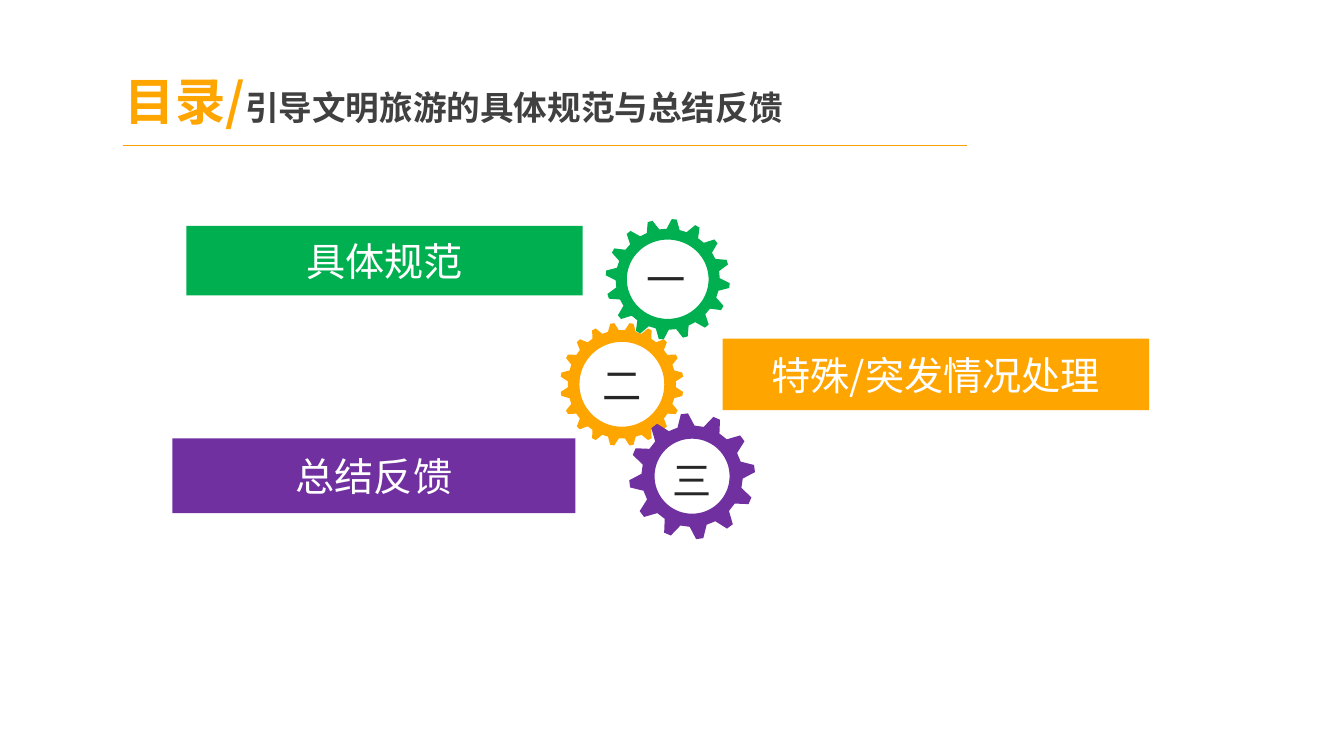
from dataclasses import dataclass
from math import cos, radians, sin

from lxml import etree
from pptx import Presentation
from pptx import util as u
from pptx.dml.color import RGBColor
from pptx.enum import shapes, text
from pptx.oxml import ns

FONT = "Noto Sans CJK SC"
GREEN, ORANGE, PURPLE = "00B050", "FFA500", "7030A0"
WHITE, DARK, GREY = "FFFFFF", "262626", "404040"


@dataclass
class Box:
    x: float
    y: float
    w: float
    h: float

    def emu(self) -> list:
        return [u.Pt(v) for v in (self.x, self.y, self.w, self.h)]


@dataclass
class Gear:
    cx: float
    cy: float
    tip: float       # radius at the tooth tips
    root: float      # radius between the teeth
    hole: float
    teeth: int
    start: float     # direction of the first tooth, degrees clockwise from the top
    base_half: float  # half angle of a tooth at its base
    tip_half: float   # half angle of a tooth at its tip
    color: str
    squash: float = 1.0

    def point(self, radius: float, angle: float) -> tuple:
        a = radians(angle)
        return (u.Pt(self.cx + radius * sin(a)),
                u.Pt(self.cy - radius * self.squash * cos(a)))


@dataclass
class Topic:
    name: str
    banner: Box
    number: str
    label: Box
    gear: Gear


# Contents, listed in stacking order of the gears
TOPICS = [
    Topic("特殊/突发情况处理", Box(516.2, 241.9, 304.6, 51.1),
          "二", Box(411.1, 255.6, 66.2, 38.9),
          Gear(444.2, 274.5, 44, 38.7, 30.3, 20, 9, 5.8, 1.9, ORANGE)),
    Topic("总结反馈", Box(123.1, 313.2, 288, 53.3),
          "三", Box(467.3, 323.3, 54, 38.9),
          Gear(494.4, 340.2, 45, 36.2, 26.8, 12, -7, 9.7, 3.3, PURPLE)),
    Topic("具体规范", Box(133.2, 161.3, 283, 49.7),
          "一", Box(455, 180, 41.8, 38.9),
          Gear(477, 199.5, 44.4, 37.2, 29.2, 16, 6, 7.2, 2.3, GREEN, 0.97)),
]


def rgb(value: str) -> RGBColor:
    return RGBColor.from_string(value)


def add_run(p, content: str, size: float, color: str, bold: bool = False) -> None:
    r = p.add_run()
    r.text = content
    for key, value in {"name": FONT, "size": u.Pt(size), "bold": bold}.items():
        setattr(r.font, key, value)
    r.font.color.rgb = rgb(color)
    # East Asian typeface
    etree.SubElement(r.font._element, ns.qn("a:ea"), typeface=FONT)


def paint(sp, color: str) -> None:
    sp.shadow.inherit = False
    sp.fill.solid()
    sp.fill.fore_color.rgb = rgb(color)
    sp.line.fill.background()


def center_text(sp, content: str, color: str) -> None:
    tf = sp.text_frame
    frame = {"word_wrap": True, "vertical_anchor": text.MSO_ANCHOR.MIDDLE,
             "margin_left": u.Pt(5), "margin_right": u.Pt(5),
             "margin_top": u.Pt(3), "margin_bottom": u.Pt(3)}
    for key, value in frame.items():
        setattr(tf, key, value)
    p = tf.paragraphs[0]
    p.alignment = text.PP_ALIGN.CENTER
    add_run(p, content, 28, color)


def add_banner(s, topic: Topic) -> None:
    sp = s.shapes.add_shape(shapes.MSO_SHAPE.RECTANGLE, *topic.banner.emu())
    paint(sp, topic.gear.color)
    center_text(sp, topic.name, WHITE)


def add_number(s, topic: Topic) -> None:
    sp = s.shapes.add_textbox(*topic.label.emu())
    center_text(sp, topic.number, DARK)
    sp.text_frame.auto_size = text.MSO_AUTO_SIZE.SHAPE_TO_FIT_TEXT


def add_gear(s, g: Gear) -> None:
    profile = [(g.root, -g.base_half), (g.tip, -g.tip_half),
               (g.tip, g.tip_half), (g.root, g.base_half)]
    rim = [g.point(radius, g.start + 360 * n / g.teeth + turn)
           for n in range(g.teeth) for radius, turn in profile]
    hole = [g.point(g.hole, -angle) for angle in range(0, 360, 5)]
    builder = s.shapes.build_freeform(*rim[0])
    builder.add_line_segments(rim[1:], close=True)
    builder.move_to(*hole[0])
    builder.add_line_segments(hole[1:], close=True)
    paint(builder.convert_to_shape(), g.color)


def add_title(s) -> None:
    tf = s.shapes.add_textbox(*Box(82.1, 52.6, 587.5, 38.9).emu()).text_frame
    tf.word_wrap = True
    tf.vertical_anchor = text.MSO_ANCHOR.MIDDLE
    p = tf.paragraphs[0]
    add_run(p, "目录/", 36, ORANGE, True)
    add_run(p, "引导文明旅游的具体规范与总结反馈", 24, GREY, True)

    # Rule under the title
    rule = s.shapes.add_connector(shapes.MSO_CONNECTOR.STRAIGHT, u.Pt(87.8),
                                  u.Pt(103.9), u.Pt(690.5), u.Pt(103.9))
    rule.line.color.rgb = rgb("F9A100")
    rule.line.width = u.Pt(0.75)
    etree.SubElement(rule._element.spPr, ns.qn("a:effectLst"))


def main() -> None:
    prs = Presentation()
    prs.slide_width, prs.slide_height = u.Pt(960), u.Pt(540)
    s = prs.slides.add_slide(prs.slide_layouts[6])
    add_title(s)
    for draw in (add_banner, add_number):
        for topic in TOPICS:
            draw(s, topic)
    for topic in TOPICS:
        add_gear(s, topic.gear)
    prs.save("out.pptx")


if __name__ == "__main__":
    main()
